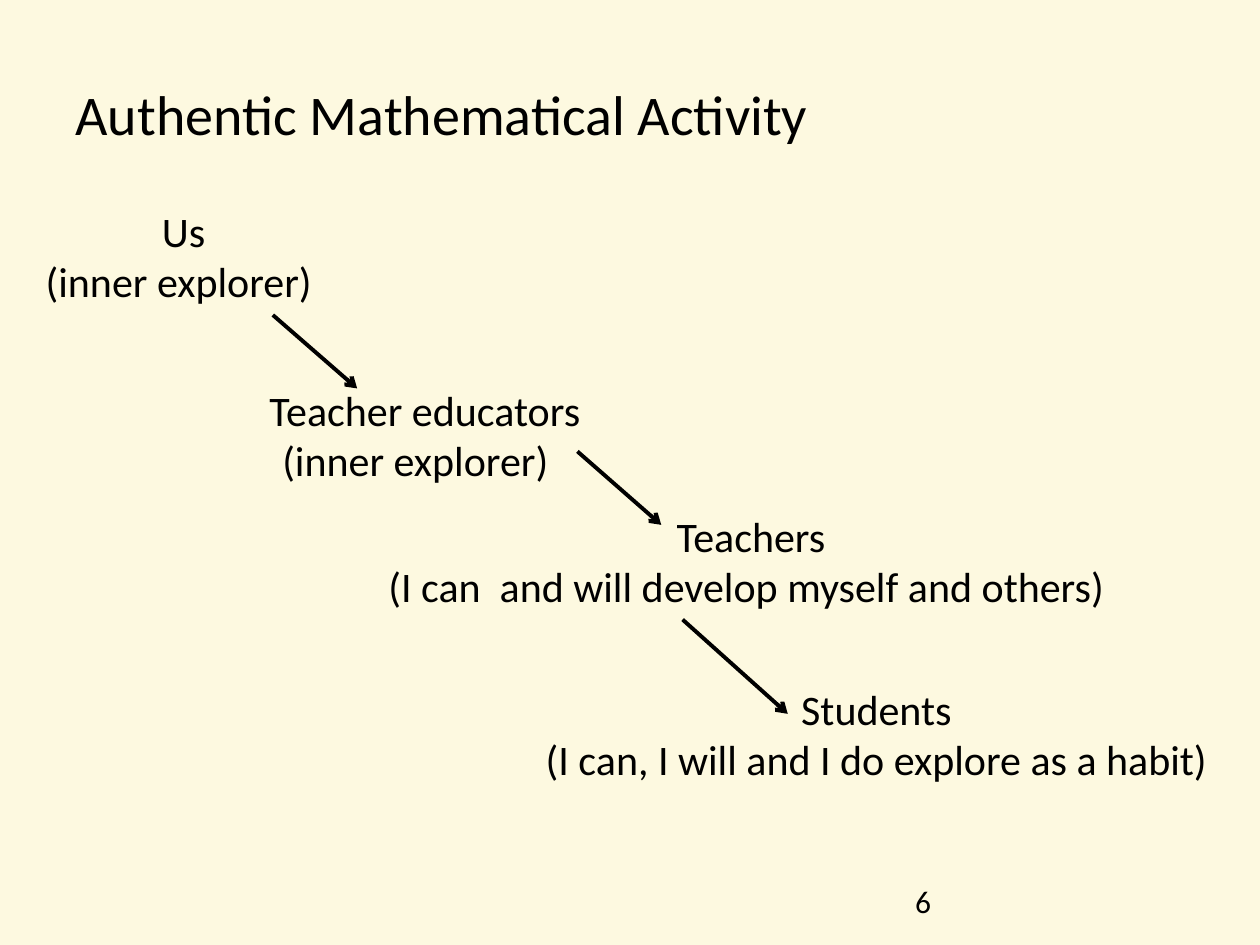
from lxml.etree import SubElement
from pptx import Presentation
from pptx.dml.color import RGBColor
from pptx.enum.shapes import MSO_CONNECTOR as Connector
from pptx.enum.text import MSO_ANCHOR as Anchor, PP_ALIGN as Align
from pptx.oxml.ns import qn
from pptx.util import Cm, Pt

CREAM = RGBColor(0xFD, 0xF9, 0xE0)
BLACK = RGBColor(0x00, 0x00, 0x00)


class ActivitySlide:
    """Holds the style and the current slide."""
    font = "Calibri"
    line_width = Pt(2.25)

    def __init__(self, slide):
        self.slide = slide
        fill = slide.background.fill
        fill.solid()
        fill.fore_color.rgb = CREAM

    def set_text(self, shape, text, size, align):
        frame = shape.text_frame
        frame.word_wrap = True
        frame.vertical_anchor = Anchor.TOP
        frame.text = text
        for paragraph in frame.paragraphs:
            paragraph.alignment = align
            for run in paragraph.runs:
                run.font.name = self.font
                run.font.size = Pt(size)
                run.font.color.rgb = BLACK

    def heading(self, text, left, top, width, height):
        title = self.slide.shapes.title
        title.left, title.top = Cm(left), Cm(top)
        title.width, title.height = Cm(width), Cm(height)
        self.set_text(title, text, 32, Align.LEFT)

    def label(self, text, left, top, width, height=2.31, size=24, align=Align.CENTER):
        box = self.slide.shapes.add_textbox(Cm(left), Cm(top), Cm(width), Cm(height))
        self.set_text(box, text, size, align)

    def arrow(self, x1, y1, x2, y2):
        link = self.slide.shapes.add_connector(
            Connector.STRAIGHT, Cm(x1), Cm(y1), Cm(x2), Cm(y2))
        link.line.color.rgb = BLACK
        link.line.width = self.line_width
        properties = link._element.spPr
        SubElement(properties.find(qn("a:ln")), qn("a:tailEnd"), type="arrow")
        SubElement(properties, qn("a:effectLst"))


def main():
    deck = Presentation()
    deck.slide_width, deck.slide_height = Cm(25.4), Cm(19.05)
    page = ActivitySlide(deck.slides.add_slide(deck.slide_layouts[5]))

    # Heading
    page.heading("Authentic Mathematical Activity", 1.27, 1.48, 22.86, 2.33)

    # Cascade of roles: text, left, top, width
    roles = [
        (" Us \v(inner explorer) ", 0.42, 4.02, 6.56),
        (" Teacher educators (inner explorer) ", 4.45, 7.62, 8.04),
        ("Teachers\v(I can  and will develop myself and others) ", 7.2, 10.16, 15.88),
        (" Students \v(I can, I will and I do explore as a habit)", 10.58, 13.65, 14.18),
    ]
    for role in roles:
        page.label(*role)

    # Arrows from each role to the next
    steps = [
        (5.5, 6.35, 7.2, 7.83),
        (11.64, 9.1, 13.33, 10.58),
        (13.76, 12.49, 15.88, 14.39),
    ]
    for step in steps:
        page.arrow(*step)

    # Page number
    page.label("6", 18.2, 17.65, 5.93, height=1.02, size=18, align=Align.LEFT)

    deck.save("out.pptx")


if __name__ == "__main__":
    main()
